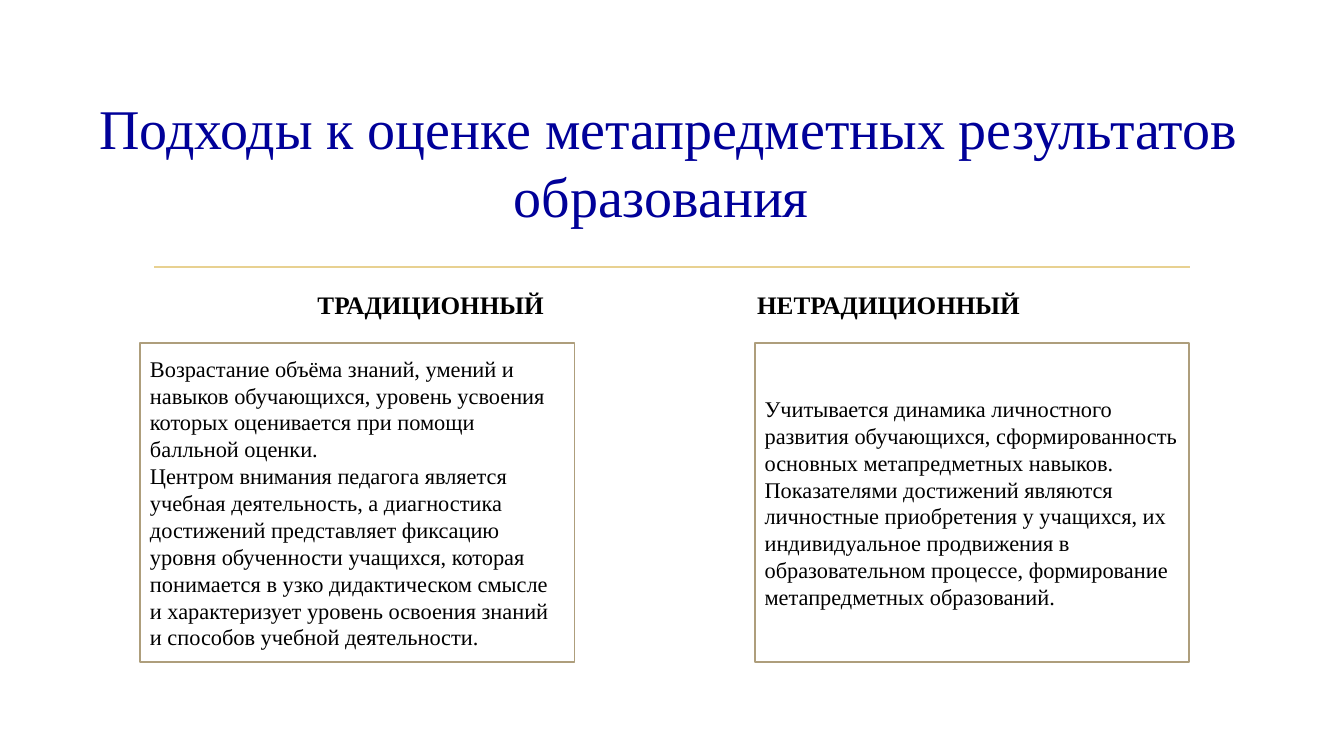
from dataclasses import dataclass

from lxml import etree
from pptx import Presentation
from pptx.dml.color import RGBColor
from pptx.enum.shapes import MSO_CONNECTOR, MSO_SHAPE
from pptx.enum.text import MSO_ANCHOR, MSO_AUTO_SIZE, PP_ALIGN
from pptx.oxml.ns import qn
from pptx.util import Cm, Pt

RECTANGLE = MSO_SHAPE.RECTANGLE
STRAIGHT = MSO_CONNECTOR.STRAIGHT
TOP, MIDDLE = MSO_ANCHOR.TOP, MSO_ANCHOR.MIDDLE
LEFT, CENTER = PP_ALIGN.LEFT, PP_ALIGN.CENTER
NO_AUTOFIT = MSO_AUTO_SIZE.NONE
TITLE_ONLY = 5


@dataclass(frozen=True)
class Theme:
    font: str = "Times New Roman"
    title_color: RGBColor = RGBColor(0x00, 0x00, 0x99)
    text_color: RGBColor = RGBColor(0x00, 0x00, 0x00)
    box_fill: RGBColor = RGBColor(0xFF, 0xFF, 0xFF)
    box_border: RGBColor = RGBColor(0xAE, 0x9E, 0x7C)
    rule_color: RGBColor = RGBColor(0xE8, 0xD1, 0x91)
    line_width: Pt = Pt(1.25)
    title_size: Pt = Pt(40)
    heading_size: Pt = Pt(18)
    body_size: Pt = Pt(16)


THEME = Theme()

TITLE = "Подходы к оценке метапредметных результатов образования "

# Each approach: heading left (cm), body left (cm), heading, body paragraphs
APPROACHES = [
    (6.32, 3.53, "ТРАДИЦИОННЫЙ", [
        "Возрастание объёма знаний, умений и навыков обучающихся, уровень "
        "усвоения которых оценивается при помощи балльной оценки.",
        "Центром внимания педагога является учебная деятельность, а "
        "диагностика достижений представляет фиксацию уровня обученности "
        "учащихся, которая понимается в узко дидактическом смысле и "
        "характеризует уровень освоения знаний и способов учебной "
        "деятельности.",
    ]),
    (17.86, 19.02, "НЕТРАДИЦИОННЫЙ", [
        "Учитывается динамика личностного развития обучающихся, "
        "сформированность основных метапредметных навыков. Показателями "
        "достижений являются личностные приобретения у учащихся, их "
        "индивидуальное продвижения в образовательном процессе, "
        "формирование метапредметных образований.",
    ]),
]


def write_text(shape, texts, size, color, align, anchor, bold=False):
    frame = shape.text_frame
    frame.word_wrap = True
    frame.auto_size = NO_AUTOFIT
    frame.vertical_anchor = anchor
    for index, text in enumerate(texts):
        para = frame.paragraphs[0] if index == 0 else frame.add_paragraph()
        para.text = text
        para.alignment = align
        para.font.name = THEME.font
        para.font.size = size
        para.font.bold = bold
        para.font.color.rgb = color


def set_title(page):
    title = page.shapes.title
    title.left, title.top = Cm(1.27), Cm(1.42)
    title.width, title.height = Cm(31.14), Cm(5.28)
    write_text(title, [TITLE], THEME.title_size, THEME.title_color,
               CENTER, MIDDLE)


def add_rule(page):
    rule = page.shapes.add_connector(
        STRAIGHT, Cm(3.89), Cm(6.73), Cm(30), Cm(6.73))
    rule.line.color.rgb = THEME.rule_color
    rule.line.width = THEME.line_width
    etree.SubElement(rule._element.spPr, qn("a:effectLst"))


def add_box(page, left, top, width, height, border=None):
    box = page.shapes.add_shape(
        RECTANGLE, Cm(left), Cm(top), Cm(width), Cm(height))
    box.shadow.inherit = False
    box.fill.solid()
    box.fill.fore_color.rgb = THEME.box_fill
    if border is None:
        box.line.fill.background()
    else:
        box.line.color.rgb = border
        box.line.width = THEME.line_width
    return box


def add_approach(page, heading_left, body_left, heading, body):
    # The body box overlaps the lower part of the heading box
    heading_box = add_box(page, heading_left, 7.16, 9.07, 4.39)
    write_text(heading_box, [heading], THEME.heading_size, THEME.text_color,
               CENTER, TOP, bold=True)
    body_box = add_box(page, body_left, 8.64, 10.95, 8.05, THEME.box_border)
    write_text(body_box, body, THEME.body_size, THEME.text_color,
               LEFT, MIDDLE)


def main():
    deck = Presentation()
    deck.slide_width, deck.slide_height = Cm(33.87), Cm(19.05)
    page = deck.slides.add_slide(deck.slide_layouts[TITLE_ONLY])

    # Title and the rule under it
    set_title(page)
    add_rule(page)

    # The two approaches side by side
    for approach in APPROACHES:
        add_approach(page, *approach)

    deck.save("out.pptx")


if __name__ == "__main__":
    main()
